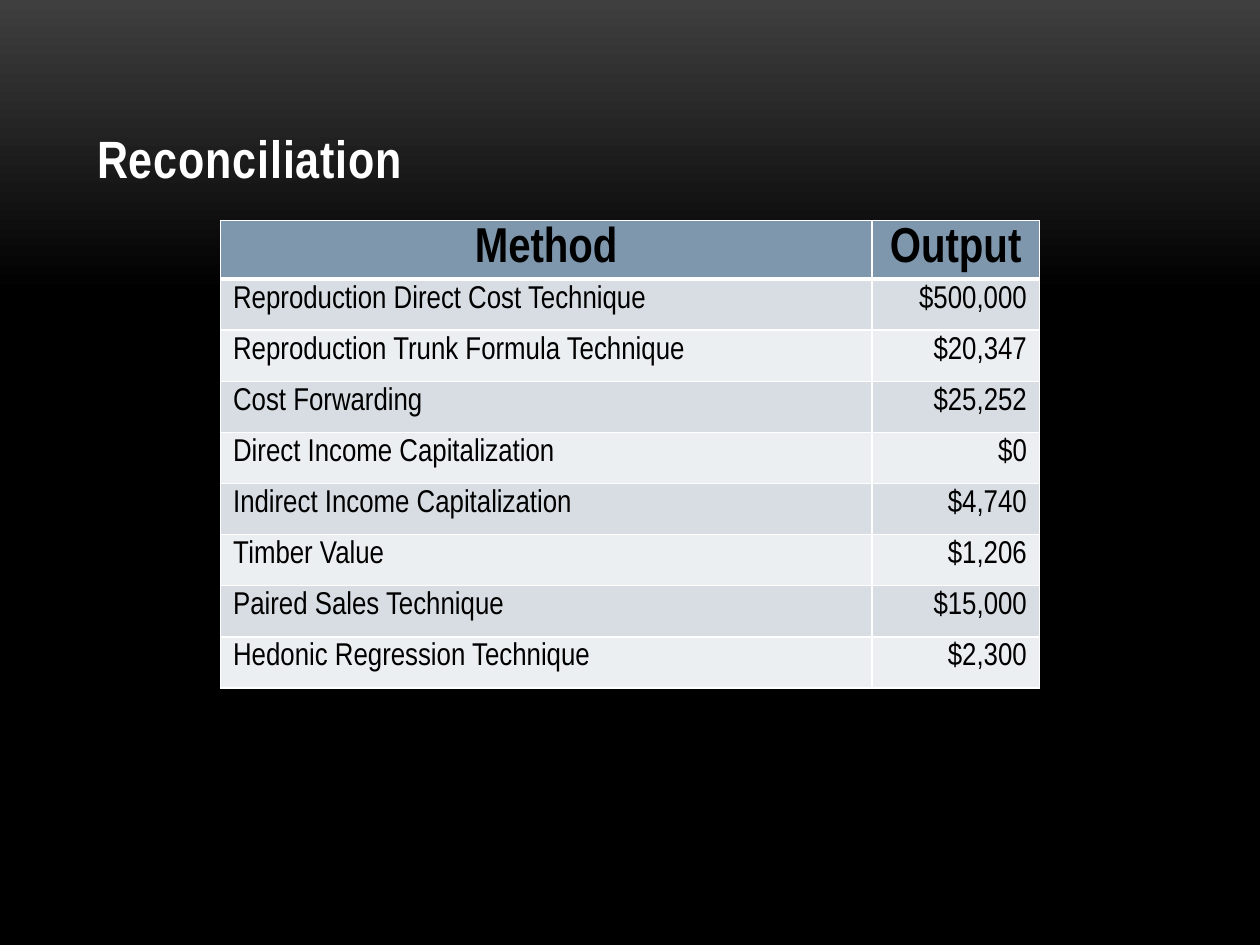
from copy import deepcopy

from lxml.etree import SubElement
from pptx import Presentation
from pptx.dml.color import RGBColor
from pptx.enum.text import MSO_ANCHOR, PP_ALIGN
from pptx.oxml.ns import qn
from pptx.util import Inches, Pt

TITLE = "Reconciliation"
HEADER = ("Method", "Output")
METHODS = [
    ("Reproduction Direct Cost Technique", "$500,000"),
    ("Reproduction Trunk Formula Technique", "$20,347"),
    ("Cost Forwarding", "$25,252"),
    ("Direct Income Capitalization", "$0"),
    ("Indirect Income Capitalization", "$4,740"),
    ("Timber Value", "$1,206"),
    ("Paired Sales Technique", "$15,000"),
    ("Hedonic Regression Technique", "$2,300"),
]
COLUMN_WIDTHS = (Inches(5.17), Inches(1.33))
HEADER_HEIGHT, ROW_HEIGHT = Inches(0.46), Pt(29.2)

FONT = "Arial Narrow"
BLACK = RGBColor(0x00, 0x00, 0x00)
WHITE = RGBColor(0xFF, 0xFF, 0xFF)
CHARCOAL = RGBColor(0x3F, 0x3F, 0x3F)
HEADER_BLUE = RGBColor(0x7E, 0x97, 0xAD)
BANDS = (RGBColor(0xD8, 0xDD, 0xE3), RGBColor(0xEC, 0xEF, 0xF1))


def style_font(font, size, color, bold):
    font.name = FONT
    font.size = Pt(size)
    font.bold = bold
    font.color.rgb = color


def set_background(slide):
    fill = slide.background.fill
    fill.gradient()
    fill.gradient_angle = 270
    for stop, position, color in zip(fill.gradient_stops, (0, 0.31), (CHARCOAL, BLACK)):
        stop.position = position
        stop.color.rgb = color
    stops = slide.element.find(".//" + qn("a:gsLst"))
    last = deepcopy(stops[-1])
    last.set("pos", "100000")
    stops.append(last)


def add_title(slide):
    title = slide.shapes.title
    title.left, title.top = Inches(0.67), Inches(0.3)
    title.width, title.height = Inches(8.67), Inches(1.25)
    frame = title.text_frame
    frame.text = TITLE
    frame.vertical_anchor = MSO_ANCHOR.BOTTOM
    para = frame.paragraphs[0]
    para.alignment = PP_ALIGN.LEFT
    span = para.runs[0]
    style_font(span.font, 30, WHITE, True)
    span.font._element.set("spc", "50")


def set_borders(cell, bottom_width, top_width):
    """Draw white borders; must run before the cell is filled."""
    properties = cell._tc.get_or_add_tcPr()
    widths = {"lnL": 1, "lnR": 1, "lnT": top_width, "lnB": bottom_width}
    for side, width in widths.items():
        line = SubElement(properties, qn(f"a:{side}"), w=str(Pt(width)))
        solid = SubElement(line, qn("a:solidFill"))
        SubElement(solid, qn("a:srgbClr"), val=str(WHITE))


def add_method_table(slide):
    rows = [HEADER] + METHODS
    height = HEADER_HEIGHT + ROW_HEIGHT * len(METHODS)
    table = slide.shapes.add_table(
        len(rows), len(HEADER), Inches(1.75), Inches(1.75),
        sum(COLUMN_WIDTHS), height).table
    for column, width in zip(table.columns, COLUMN_WIDTHS):
        column.width = width
    for row_index, values in enumerate(rows):
        is_header = row_index == 0
        table.rows[row_index].height = HEADER_HEIGHT if is_header else ROW_HEIGHT
        for column_index, value in enumerate(values):
            cell = table.cell(row_index, column_index)
            set_borders(cell, 3 if is_header else 1, 3 if row_index == 1 else 1)
            cell.fill.solid()
            cell.fill.fore_color.rgb = HEADER_BLUE if is_header else BANDS[(row_index - 1) % 2]
            cell.margin_top = cell.margin_bottom = Inches(0.05)
            cell.text_frame.text = value
            para = cell.text_frame.paragraphs[0]
            body_alignment = (PP_ALIGN.LEFT, PP_ALIGN.RIGHT)[column_index]
            para.alignment = PP_ALIGN.CENTER if is_header else body_alignment
            style_font(para.runs[0].font, 28 if is_header else 18, BLACK, is_header)


def main():
    deck = Presentation()
    deck.slide_width, deck.slide_height = Inches(10), Inches(7.5)
    slide = deck.slides.add_slide(deck.slide_layouts.get_by_name("Title Only"))
    set_background(slide)
    add_title(slide)
    add_method_table(slide)
    deck.save("out.pptx")


if __name__ == "__main__":
    main()
